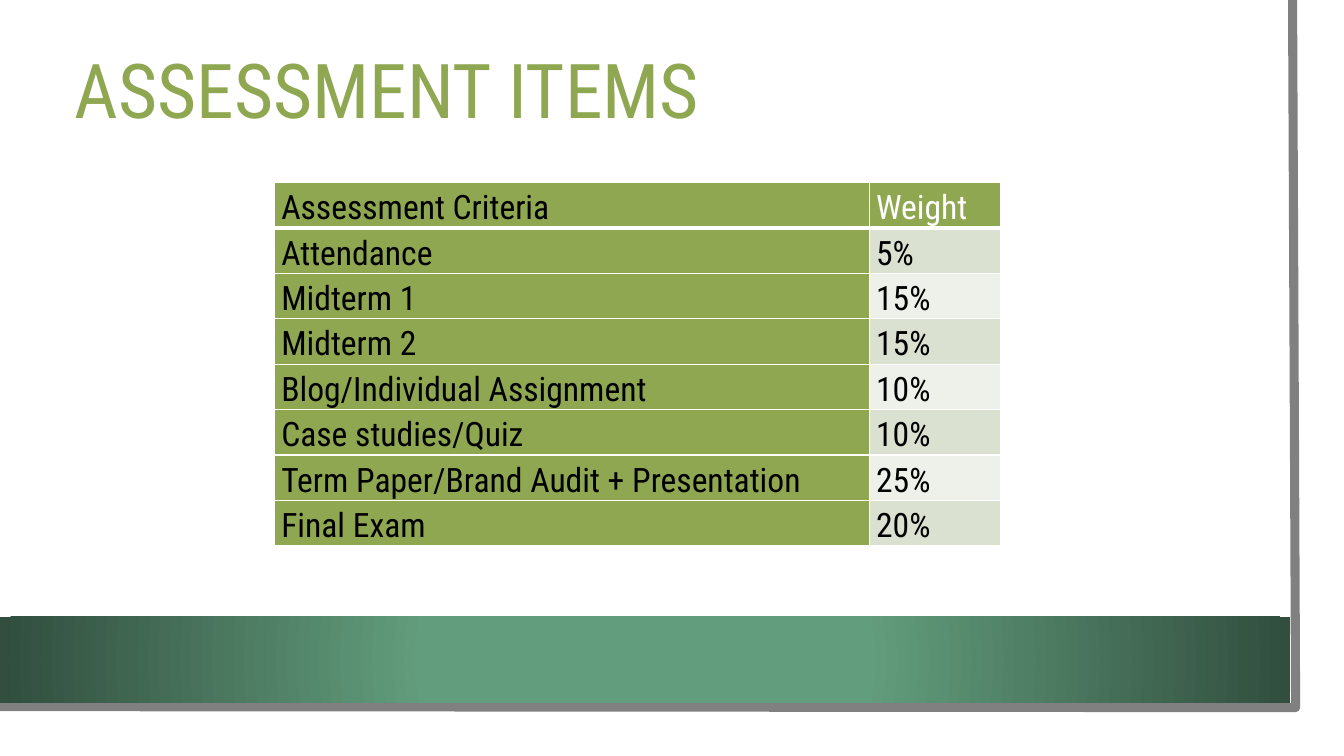
from lxml import etree
from pptx import Presentation
from pptx.dml.color import RGBColor
from pptx.enum.shapes import MSO_SHAPE as SHAPE
from pptx.enum.text import MSO_ANCHOR as ANCHOR, PP_ALIGN as ALIGN
from pptx.oxml import parse_xml
from pptx.oxml.ns import nsdecls, qn
from pptx.util import Inches, Pt

COLORS = {"green": "8FA751", "band_light": "DBE1D0", "band_pale": "EEF1E9",
          "white": "FFFFFF", "black": "000000", "grey": "808080",
          "footer_mid": "629D7D", "footer_edge": "314E3E"}
FONT = "Roboto Condensed"


def rgb(name):
    return RGBColor.from_string(COLORS[name])


def write(tf, text, size=24, color="black", spacing=1.15):
    p = tf.paragraphs[0]
    p.alignment = ALIGN.LEFT
    p.line_spacing = spacing
    r = p.add_run()
    r.text = text
    r.font.name = FONT
    r.font.size = Pt(size)
    r.font.bold = False
    r.font.color.rgb = rgb(color)


prs = Presentation()
prs.slide_width, prs.slide_height = Inches(13.33), Inches(7.5)
s = prs.slides.add_slide(prs.slide_layouts[5])

# Page edge
builder = s.shapes.build_freeform(Inches(12.82), 0)
builder.add_line_segments([(Inches(12.85), Inches(7.02)),
                           (Inches(-0.03), Inches(7.01))], close=False)
edge = builder.convert_to_shape()
edge.shadow.inherit = False
edge.fill.background()
edge.line.color.rgb = rgb("grey")
edge.line.width = Pt(6.5)

# Footer band with a radial gradient
footer = s.shapes.add_shape(SHAPE.RECTANGLE, 0, Inches(6.12), Inches(12.8), Inches(0.85))
footer.shadow.inherit = False
footer.line.fill.background()
gradient = parse_xml(
    f'<a:gradFill {nsdecls("a")} rotWithShape="1"><a:gsLst>'
    f'<a:gs pos="34000"><a:srgbClr val="{COLORS["footer_mid"]}"/></a:gs>'
    f'<a:gs pos="100000"><a:srgbClr val="{COLORS["footer_edge"]}"/></a:gs></a:gsLst>'
    '<a:path path="circle"><a:fillToRect l="50000" t="50000" r="50000" b="50000"/></a:path>'
    '</a:gradFill>')
footer._element.spPr.find(qn("a:prstGeom")).addnext(gradient)

# Title
title = s.shapes.title
title.left, title.top = Inches(0.64), Inches(0.3)
title.width, title.height = Inches(11.37), Inches(1.26)
title.text_frame.vertical_anchor = ANCHOR.MIDDLE
write(title.text_frame, "ASSESSMENT ITEMS", size=54, color="green", spacing=0.9)

# Assessment table
rows = [("Assessment Criteria", "Weight"),
        ("Attendance", "5%"),
        ("Midterm 1", "15%"),
        ("Midterm 2", "15%"),
        ("Blog/Individual Assignment", "10%"),
        ("Case studies/Quiz", "10%"),
        ("Term Paper/Brand Audit + Presentation", "25%"),
        ("Final Exam", "20%")]
row_height = Inches(0.45)
table = s.shapes.add_table(len(rows), 2, Inches(2.72), Inches(1.81),
                           Inches(7.2), row_height * len(rows)).table
table.columns[0].width, table.columns[1].width = Inches(5.9), Inches(1.3)

for i, row in enumerate(rows):
    table.rows[i].height = row_height
    for j, text in enumerate(row):
        cell = table.cell(i, j)
        cell.margin_left = cell.margin_right = Inches(0.07)
        cell.margin_top = cell.margin_bottom = 0
        write(cell.text_frame, text, color="white" if (i, j) == (0, 1) else "black")
        for side in "LRTB":
            thick = (i, side) in ((0, "B"), (1, "T"))
            ln = etree.SubElement(cell._tc.get_or_add_tcPr(), qn(f"a:ln{side}"),
                                  w=str(Pt(3 if thick else 1)))
            fill = etree.SubElement(ln, qn("a:solidFill"))
            etree.SubElement(fill, qn("a:srgbClr"), val=COLORS["white"])
        cell.fill.solid()
        band = "band_light" if i % 2 else "band_pale"
        cell.fill.fore_color.rgb = rgb("green" if i == 0 or j == 0 else band)

prs.save("out.pptx")
